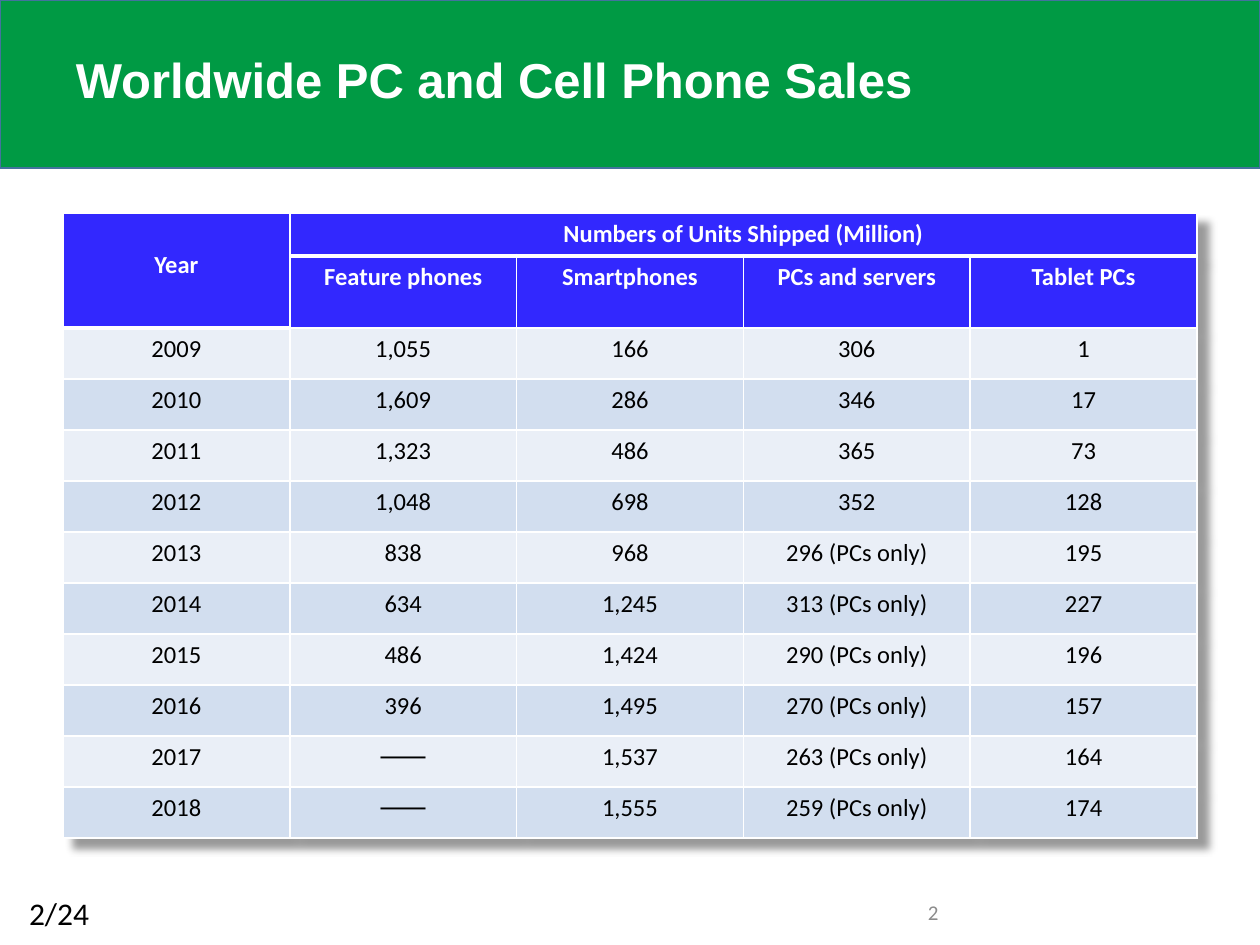
"""Build the slide on worldwide PC and cell phone sales."""
import dataclasses

import lxml.etree
import pptx
import pptx.dml.color
import pptx.enum.shapes
import pptx.enum.text
import pptx.oxml
import pptx.oxml.ns
import pptx.util

EMU_PER_PX = 914400 / 126
MIDDLE = pptx.enum.text.MSO_ANCHOR.MIDDLE


@dataclasses.dataclass(frozen=True)
class Theme:
    """Colours, fonts and type sizes of the slide."""

    banner: str = "009A44"
    banner_line: str = "43739E"
    header: str = "3228FE"
    bands: tuple = ("EAEFF7", "D2DEEF")
    white: str = "FFFFFF"
    black: str = "000000"
    grey: str = "8C8C8C"
    title_font: str = "Arial"
    body_font: str = "Calibri"
    dash_font: str = "Times New Roman"
    title_size: int = 28
    page_size: int = 18
    table_size: int = 14
    number_size: int = 12


THEME = Theme()
DASH = "⸺"
GROUP = "Numbers of Units Shipped (Million)"
DEVICES = ("Feature phones", "Smartphones", "PCs and servers", "Tablet PCs")
SALES = (
    ("2009", "1,055", "166", "306", "1"),
    ("2010", "1,609", "286", "346", "17"),
    ("2011", "1,323", "486", "365", "73"),
    ("2012", "1,048", "698", "352", "128"),
    ("2013", "838", "968", "296 (PCs only)", "195"),
    ("2014", "634", "1,245", "313 (PCs only)", "227"),
    ("2015", "486", "1,424", "290 (PCs only)", "196"),
    ("2016", "396", "1,495", "270 (PCs only)", "157"),
    ("2017", DASH, "1,537", "263 (PCs only)", "164"),
    ("2018", DASH, "1,555", "259 (PCs only)", "174"),
)


def px(length):
    """Turn pixels into EMU."""
    return pptx.util.Emu(round(length * EMU_PER_PX))


def rgb(code):
    """Turn a hex code into a colour."""
    return pptx.dml.color.RGBColor.from_string(code)


def style_text(para, font, size, colour, bold=False):
    """Format every run of a paragraph."""
    for span in para.runs:
        span.font.name = font
        span.font.size = pptx.util.Pt(size)
        span.font.color.rgb = rgb(colour)
        span.font.bold = bold


def add_banner(page, width, height):
    """Add the coloured band behind the title."""
    banner = page.shapes.add_shape(
        pptx.enum.shapes.MSO_SHAPE.RECTANGLE, 0, 0, px(width), px(height))
    banner.shadow.inherit = False
    banner.fill.solid()
    banner.fill.fore_color.rgb = rgb(THEME.banner)
    banner.line.color.rgb = rgb(THEME.banner_line)
    banner.line.width = pptx.util.Pt(1)


def add_label(page, text, place, font, size, colour, bold=False, inset=13):
    """Add a vertically centred line of text."""
    box = page.shapes.add_textbox(*map(px, place))
    frame = box.text_frame
    frame.word_wrap = True
    frame.vertical_anchor = MIDDLE
    frame.margin_left = px(inset)
    frame.text = text
    para = frame.paragraphs[0]
    style_text(para, font, size, colour, bold)
    return para


def set_borders(cell, bottom):
    """Give a cell white borders, with its own bottom width in points."""
    properties = cell._tc.get_or_add_tcPr()
    widths = {"lnL": 1, "lnR": 1, "lnT": 1, "lnB": bottom}
    for index, (side, width) in enumerate(widths.items()):
        line = pptx.oxml.parse_xml(
            f'<a:{side} {pptx.oxml.ns.nsdecls("a")} w="{pptx.util.Pt(width)}">'
            f'<a:solidFill><a:srgbClr val="{THEME.white}"/></a:solidFill></a:{side}>')
        properties.insert(index, line)


def fill_cell(cell, text, fill, colour, bold=False, bottom=1):
    """Write and format one table cell."""
    cell.text = text
    cell.fill.solid()
    cell.fill.fore_color.rgb = rgb(fill)
    set_borders(cell, bottom)
    para = cell.text_frame.paragraphs[0]
    para.alignment = pptx.enum.text.PP_ALIGN.CENTER
    font = THEME.dash_font if text == DASH else THEME.body_font
    style_text(para, font, THEME.table_size, colour, bold)


def add_table_shadow(table):
    """Cast a soft shadow to the lower right of a table."""
    effects = pptx.oxml.parse_xml(
        f'<a:effectLst {pptx.oxml.ns.nsdecls("a")}>'
        '<a:outerShdw blurRad="50800" dist="108000" dir="2700000" algn="tl" rotWithShape="0">'
        f'<a:srgbClr val="{THEME.black}"><a:alpha val="40000"/></a:srgbClr>'
        '</a:outerShdw></a:effectLst>')
    table._tbl.tblPr.insert(0, effects)


def add_sales_table(page):
    """Add the table of units shipped by year."""
    heights = [43, 72] + [51] * len(SALES)
    columns = len(DEVICES) + 1
    frame = page.shapes.add_table(
        len(heights), columns, px(63), px(213), px(1134), px(sum(heights)))
    table = frame.table
    table.first_row = table.horz_banding = False
    for row, height in zip(table.rows, heights):
        row.height = px(height)
    headers = (("Year", GROUP) + ("",) * (columns - 2), ("",) + DEVICES)
    for row, texts in enumerate(headers + SALES):
        is_header = row < len(headers)
        fill = THEME.header if is_header else THEME.bands[row % 2]
        colour = THEME.white if is_header else THEME.black
        for column, text in enumerate(texts):
            bottom = 3 if row == 0 or (row == 1 and column == 0) else 1
            fill_cell(table.cell(row, column), text, fill, colour, is_header, bottom)
    year = table.cell(0, 0)
    year.merge(table.cell(1, 0))
    year.vertical_anchor = MIDDLE
    year.margin_bottom = px(18)
    table.cell(0, 1).merge(table.cell(0, columns - 1))
    add_table_shadow(table)


def main():
    """Build and save the deck."""
    deck = pptx.Presentation()
    deck.slide_width, deck.slide_height = px(1260), px(945)
    page = deck.slides.add_slide(deck.slide_layouts[6])
    add_banner(page, 1260, 168)
    title = add_label(page, "Worldwide PC and Cell Phone Sales", (63, 0, 1134, 165),
                      THEME.title_font, THEME.title_size, THEME.white, bold=True)
    title.line_spacing = 0.9
    add_label(page, "2", (915, 880, 294, 65),
              THEME.body_font, THEME.number_size, THEME.grey)
    add_label(page, "2/24", (0, 881, 131, 64),
              THEME.body_font, THEME.page_size, THEME.black, inset=29)
    add_sales_table(page)
    deck.save("out.pptx")


if __name__ == "__main__":
    main()
